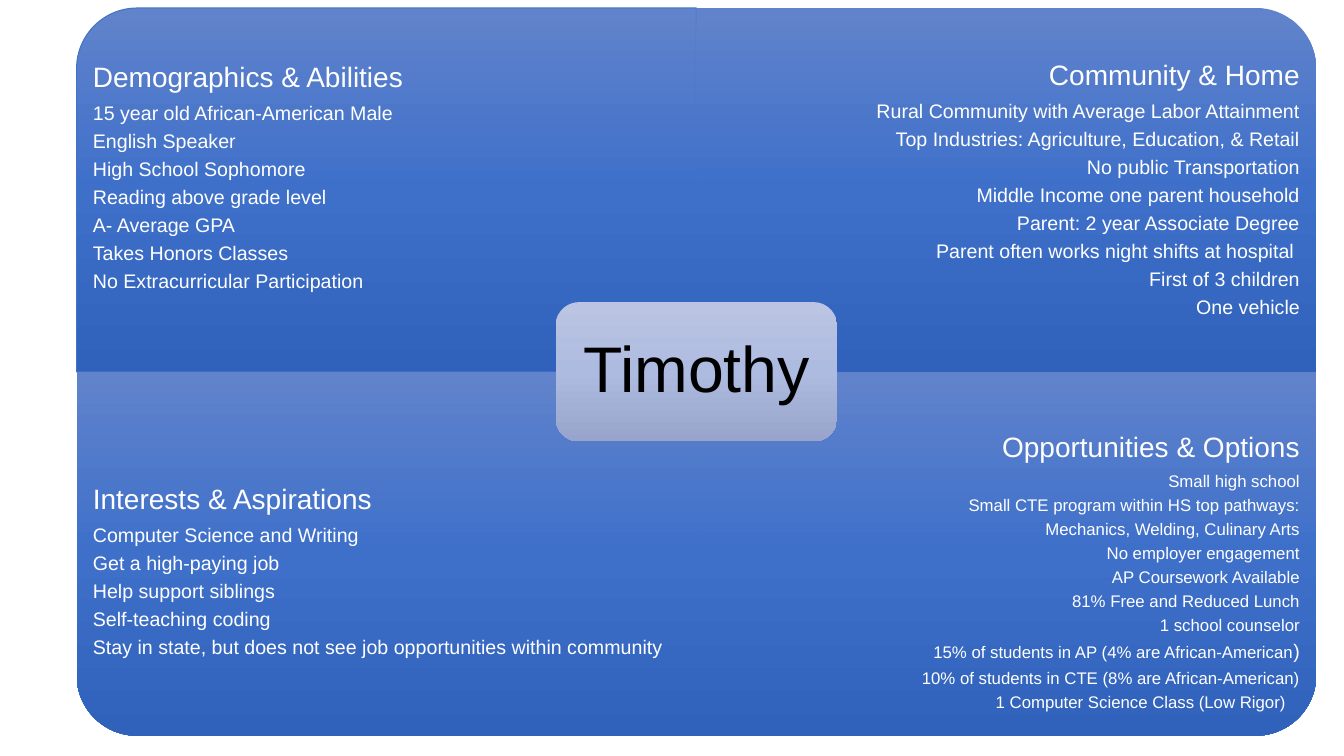
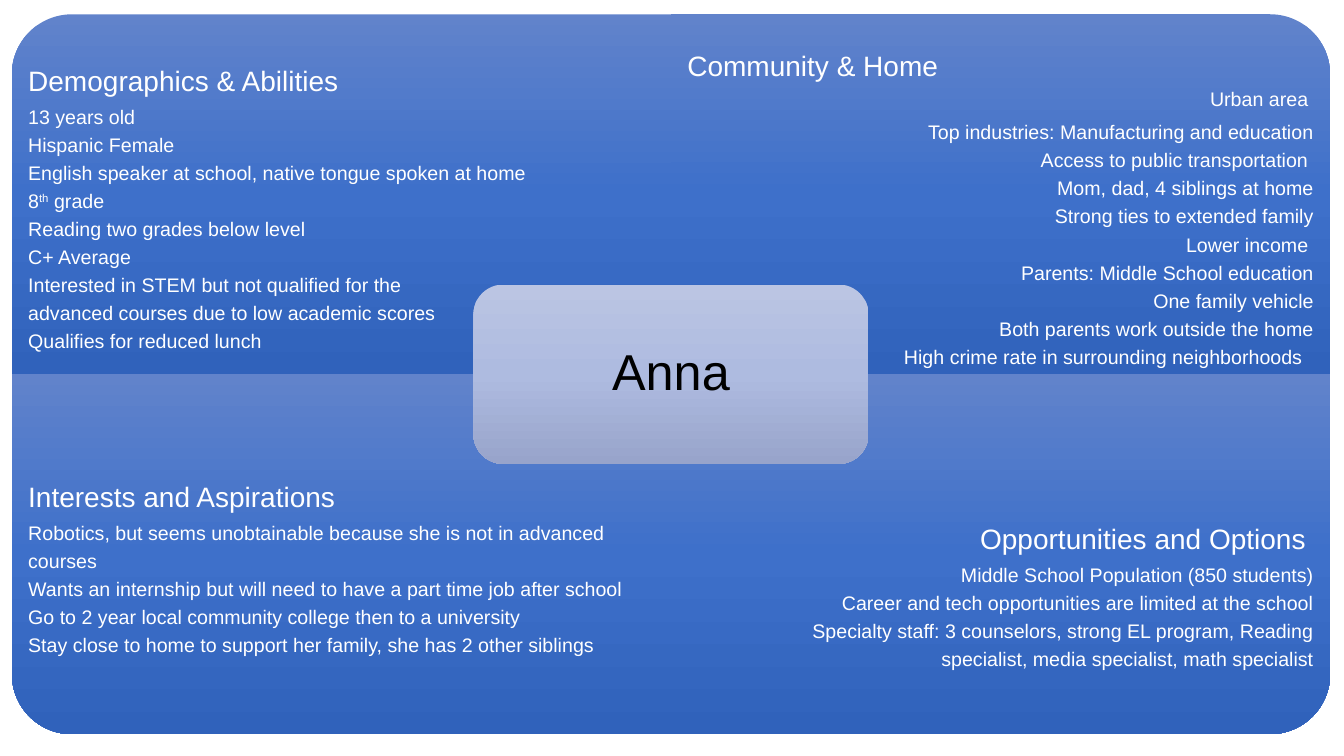
from dataclasses import dataclass

from pptx import Presentation
from pptx.dml.color import RGBColor
from pptx.enum.shapes import MSO_SHAPE
from pptx.enum.text import MSO_ANCHOR, MSO_AUTO_SIZE, PP_ALIGN
from pptx.oxml import parse_xml
from pptx.oxml.ns import nsdecls, qn
from pptx.oxml.xmlchemy import OxmlElement
from pptx.util import Cm, Pt

ROUND_ONE, ROUND_ALL = MSO_SHAPE.ROUND_1_RECTANGLE, MSO_SHAPE.ROUNDED_RECTANGLE
LEFT, CENTER, RIGHT = PP_ALIGN.LEFT, PP_ALIGN.CENTER, PP_ALIGN.RIGHT
TOP, MIDDLE = MSO_ANCHOR.TOP, MSO_ANCHOR.MIDDLE
NO_FIT = MSO_AUTO_SIZE.NONE

WHITE = RGBColor(0xFF, 0xFF, 0xFF)
BLACK = RGBColor(0, 0, 0)
OUTLINE = RGBColor(0x44, 0x72, 0xC4)
PANEL_STOPS = (RGBColor(0x61, 0x83, 0xCB), RGBColor(0x3E, 0x70, 0xCA), RGBColor(0x30, 0x62, 0xBB))
CARD_STOPS = (RGBColor(0xBB, 0xC5, 0xE3), RGBColor(0xAE, 0xBB, 0xE0), RGBColor(0x98, 0xA4, 0xCB))

FONT = "Arial"
HEADING_SIZE = 20
SPACE_AFTER = 0.35
INSET = 0.41
COMPARISON_LAYOUT = 4
# Column, row and rotation that turns the round corner outwards
QUADRANTS = ((0, 0, 270), (1, 0, 0), (0, 1, 180), (1, 1, 90))


@dataclass
class Line:
    """A paragraph; runs holds (text, size or None, superscript) tuples."""
    runs: list
    align: PP_ALIGN = None
    after: float = None
    right_indent: float = 0


@dataclass
class Panel:
    heading: object
    lines: list
    text_top: float
    size: int = 14


@dataclass
class Profile:
    """A board of four panels (left, top, panel width, panel height) around a name card."""
    name: str
    name_size: int
    board: tuple
    card: tuple
    panels: list
    outlined: bool = False


def single(text, **options):
    return Line([(text, None, False)], **options)


TIMOTHY = Profile("Timothy", 46, (1.93, 0.2, 15.62, 9.17), (7.09, 3.51), [
    Panel("Demographics & Abilities", [
        "15 year old African-American Male",
        "English Speaker",
        "High School Sophomore",
        "Reading above grade level",
        "A- Average GPA",
        "Takes Honors Classes",
        "No Extracurricular Participation",
    ], 1.39),
    Panel("Community & Home", [
        "Rural Community with Average Labor Attainment",
        "Top Industries: Agriculture, Education, & Retail",
        "No public Transportation",
        "Middle Income one parent household",
        "Parent: 2 year Associate Degree",
        "Parent often works night shifts at hospital ",
        "First of 3 children",
        "One vehicle",
    ], 1.35),
    Panel("Interests & Aspirations", [
        "Computer Science and Writing",
        "Get a high-paying job",
        "Help support siblings",
        "Self-teaching coding",
        "Stay in state, but does not see job opportunities within community",
    ], 2.86),
    Panel("Opportunities & Options", [
        "Small high school",
        "Small CTE program within HS top pathways:",
        "Mechanics, Welding, Culinary Arts",
        "No employer engagement",
        "AP Coursework Available",
        "81% Free and Reduced Lunch",
        "1 school counselor",
        Line([("15% of students in AP (4% are African-American", None, False),
              (")", 14, False)]),
        "10% of students in CTE (8% are African-American)",
        single("1 Computer Science Class (Low Rigor)", right_indent=0.35),
    ], 1.55, 12),
], outlined=True)

ANNA = Profile("Anna", 36, (0.3, 0.36, 16.61, 9.07), (9.96, 4.52), [
    Panel("Demographics & Abilities", [
        "13 years old",
        "Hispanic Female",
        "English speaker at school, native tongue spoken at home",
        Line([("8", None, False), ("th", None, True), (" grade", None, False)]),
        "Reading two grades below level",
        "C+ Average",
        "Interested in STEM but not qualified for the",
        "advanced courses due to low academic scores",
        "Qualifies for reduced lunch",
    ], 1.34),
    Panel(single("Community & Home", align=LEFT, after=5.3), [
        single("Urban area ", after=8.3),
        "Top industries: Manufacturing and education",
        "Access to public transportation ",
        "Mom, dad, 4 siblings at home",
        "Strong ties to extended family",
        "Lower income ",
        "Parents: Middle School education",
        "One family vehicle",
        "Both parents work outside the home",
        single("High crime rate in surrounding neighborhoods", right_indent=0.28),
    ], 0.96),
    Panel("Interests and Aspirations", [
        "Robotics, but seems unobtainable because she is not in advanced",
        "courses",
        "Wants an internship but will need to have a part time job after school",
        "Go to 2 year local community college then to a university",
        "Stay close to home to support her family, she has 2 other siblings",
    ], 2.75),
    Panel("Opportunities and Options ", [
        "Middle School Population (850 students)",
        "Career and tech opportunities are limited at the school",
        "Specialty staff: 3 counselors, strong EL program, Reading",
        "specialist, media specialist, math specialist",
    ], 3.81),
])


def place(sp, left, top, width, height):
    sp.left, sp.top, sp.width, sp.height = Cm(left), Cm(top), Cm(width), Cm(height)


def add_gradient_shape(s, kind, box, stops):
    """Add a shape whose gradient stays vertical however the shape is turned."""
    sp = s.shapes.add_shape(kind, *map(Cm, box))
    sp.shadow.inherit = False
    sp.line.fill.background()
    sp.fill.gradient()
    gs = "".join(f'<a:gs pos="{i * 50000}"><a:srgbClr val="{color}"/></a:gs>'
                 for i, color in enumerate(stops))
    grad = parse_xml(f'<a:gradFill {nsdecls("a")} rotWithShape="0"><a:gsLst>{gs}</a:gsLst>'
                     '<a:lin ang="5400000" scaled="0"/></a:gradFill>')
    spPr = sp._element.spPr
    spPr.replace(spPr.find(qn("a:gradFill")), grad)
    return sp


def prepare_frame(sp, anchor, inset, top_inset):
    tf = sp.text_frame
    tf.word_wrap = True
    tf.auto_size = NO_FIT
    tf.vertical_anchor = anchor
    tf.margin_left = tf.margin_right = Cm(inset)
    tf.margin_top = tf.margin_bottom = Cm(top_inset)
    return tf


def write_line(p, line, size, color, align):
    if isinstance(line, str):
        line = single(line)
    pPr = p._p.get_or_add_pPr()
    pPr.set("marL", "0")
    pPr.set("indent", "0")
    pPr.set("marR", str(Cm(line.right_indent)))
    pPr.append(OxmlElement("a:buNone"))
    p.alignment = line.align or align
    p.line_spacing = 0.9
    p.space_before = Pt(0)
    largest = max(run_size or size for _, run_size, _ in line.runs)
    p.space_after = Pt(line.after or round(largest * SPACE_AFTER, 1))
    for text, run_size, superscript in line.runs:
        r = p.add_run()
        r.text = text
        r.font.name = FONT
        r.font.size = Pt(run_size or size)
        r.font.bold = False
        r.font.color.rgb = color
        if superscript:
            r._r.get_or_add_rPr().set("baseline", "30000")


def add_panel(s, box, rotation, outlined):
    left, top, width, height = box
    if rotation % 180:
        box = (left + (width - height) / 2, top + (height - width) / 2, height, width)
    sp = add_gradient_shape(s, ROUND_ONE, box, PANEL_STOPS)
    sp.rotation = rotation
    if outlined:
        sp.line.color.rgb = OUTLINE
        sp.line.width = Pt(0.75)


def fill_panel_text(s, body, box, panel, align):
    left, top, width, height = box
    place(body, left, top + panel.text_top, width, height - panel.text_top)
    s.shapes._spTree.append(body._element)
    tf = prepare_frame(body, TOP, INSET, 0)
    write_line(tf.paragraphs[0], panel.heading, HEADING_SIZE, WHITE, align)
    for line in panel.lines:
        write_line(tf.add_paragraph(), line, panel.size, WHITE, align)


def add_name_card(s, center_x, center_y, size, name, name_size):
    width, height = size
    box = (center_x - width / 2, center_y - height / 2, width, height)
    add_gradient_shape(s, ROUND_ALL, box, CARD_STOPS)
    title = s.shapes.title
    place(title, *box)
    s.shapes._spTree.append(title._element)
    tf = prepare_frame(title, MIDDLE, INSET, INSET)
    write_line(tf.paragraphs[0], name, name_size, BLACK, CENTER)


def add_profile_slide(prs, profile):
    s = prs.slides.add_slide(prs.slide_layouts[COMPARISON_LAYOUT])
    bodies = [ph for ph in s.placeholders if ph.placeholder_format.idx > 0]
    left, top, width, height = profile.board
    boxes = [(left + column * width, top + row * height, width, height)
             for column, row, _ in QUADRANTS]
    # All panels go below all text
    for i, (box, (_, _, rotation)) in enumerate(zip(boxes, QUADRANTS)):
        add_panel(s, box, rotation, profile.outlined and i == 0)
    for body, box, panel, (column, _, _) in zip(bodies, boxes, profile.panels, QUADRANTS):
        fill_panel_text(s, body, box, panel, RIGHT if column else LEFT)
    add_name_card(s, left + width, top + height, profile.card, profile.name, profile.name_size)


def main():
    prs = Presentation()
    prs.slide_width, prs.slide_height = Cm(33.87), Cm(19.05)
    for profile in (TIMOTHY, ANNA):
        add_profile_slide(prs, profile)
    prs.save("out.pptx")


if __name__ == "__main__":
    main()
